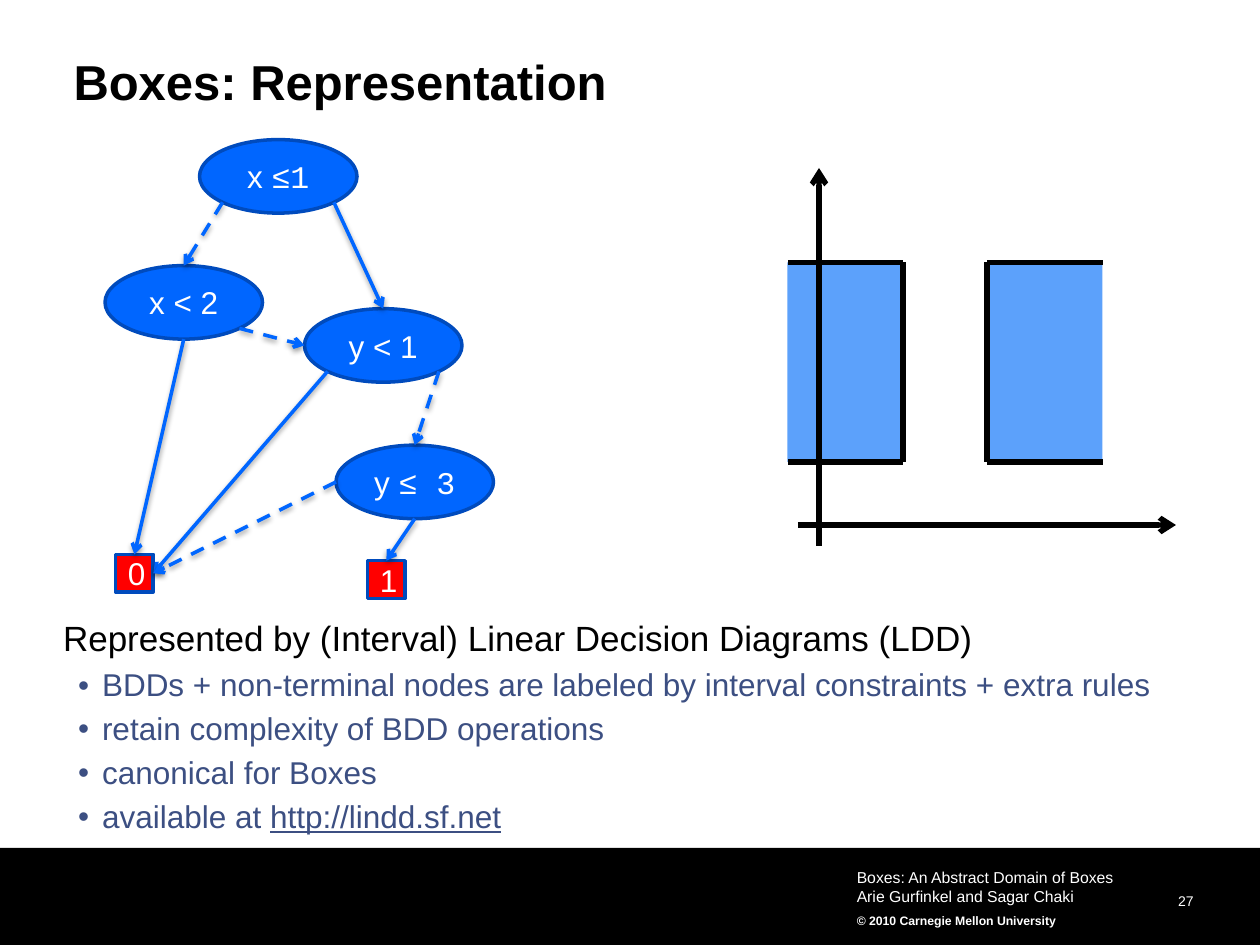
from dataclasses import dataclass

from lxml import etree
from pptx import Presentation
from pptx import util as u
from pptx.dml.color import RGBColor
from pptx.enum import dml, shapes, text
from pptx.oxml import parse_xml
from pptx.oxml.ns import qn

COLS, ROWS = 120, 90
WIDE, HIGH = u.Inches(10), u.Inches(7.5)
HUES = {"black": "000000", "white": "FFFFFF", "blue": "0066FF", "edge": "004BBD",
        "red": "FF0000", "sky": "5CA1FB", "slate": "3C4F82"}
DIAG = 0.5 ** 1.5
PORTS = {"top": (0.5, 0), "left": (0, 0.5), "low": (0.5, 1), "right": (1, 0.5),
         "sw": (0.5 - DIAG, 0.5 + DIAG), "se": (0.5 + DIAG, 0.5 + DIAG)}
SIDES = {"top": 0, "left": 1, "low": 2, "right": 3}
SHADE = ('<a:effectLst xmlns:a="http://schemas.openxmlformats.org/drawingml/2006/main">'
         '<a:outerShdw blurRad="40000" dist="20000" dir="5400000" rotWithShape="0">'
         '<a:srgbClr val="000000"><a:alpha val="38000"/></a:srgbClr>'
         '</a:outerShdw></a:effectLst>')


@dataclass
class Node:
    col: float
    row: float
    name: str
    math: str = ""
    leaf: bool = False
    inset: float = 0.1

    def size(self) -> tuple:
        return (3.6, 3.6) if self.leaf else (15, 7)

    def port(self, side: str) -> tuple:
        (w, h), (fx, fy) = self.size(), PORTS[side]
        return self.col + w * fx, self.row + h * fy


@dataclass
class Edge:
    start: str
    out: str
    end: str
    side: str
    dash: bool = False


NODES = {
    "x1": Node(19, 13.3, "x ", "≤1"),
    "x2": Node(10, 25.3, "x < 2"),
    "y1": Node(29, 29.4, "y < 1"),
    "y3": Node(32, 42.4, "y ", "≤ 3", inset=0),
    "no": Node(11, 52.8, "0", leaf=True),
    "yes": Node(35, 53.4, "1", leaf=True),
}
EDGES = [
    Edge("y1", "sw", "no", "right"),
    Edge("x1", "sw", "x2", "top", True),
    Edge("x1", "se", "y1", "top"),
    Edge("x2", "se", "y1", "left", True),
    Edge("y1", "se", "y3", "top", True),
    Edge("y3", "low", "yes", "top"),
    Edge("y3", "left", "no", "right", True),
    Edge("x2", "low", "no", "top"),
]


def hue(name: str) -> RGBColor:
    return RGBColor.from_string(HUES[name])


def across(col: float) -> int:
    return round(WIDE * col / COLS)


def down(row: float) -> int:
    return round(HIGH * row / ROWS)


def area(col: float, row: float, w: float, h: float) -> tuple:
    return across(col), down(row), across(w), down(h)


def style(run, size: float, tone: str, bold: bool = False, face: str = "Arial") -> None:
    run.font.size, run.font.bold, run.font.name = u.Pt(size), bold, face
    run.font.color.rgb = hue(tone)


def inset(frame, gap: float) -> None:
    frame.margin_left = frame.margin_right = u.Inches(gap)
    frame.margin_top = frame.margin_bottom = u.Inches(gap)


def block(kind, box: tuple, fill: str):
    shape = slide.shapes.add_shape(kind, *area(*box))
    shape.shadow.inherit = False
    shape.fill.solid()
    shape.fill.fore_color.rgb = hue(fill)
    shape.line.fill.background()
    return shape


def draw_node(node: Node):
    kind = shapes.MSO_SHAPE.RECTANGLE if node.leaf else shapes.MSO_SHAPE.OVAL
    shape = block(kind, (node.col, node.row, *node.size()), "red" if node.leaf else "blue")
    shape.line.color.rgb = hue("edge")
    shape.line.width = u.Pt(2)
    frame = shape.text_frame
    frame.vertical_anchor = text.MSO_ANCHOR.MIDDLE
    if node.inset == 0:
        inset(frame, 0)
    para = frame.paragraphs[0]
    para.text = node.name
    para.alignment = text.PP_ALIGN.CENTER
    style(para.runs[0], 18, "white")
    if node.math:
        run = para.add_run()
        run.text = node.math
        style(run, 18, "white", face="Courier New")
    return shape


def draw_line(start: tuple, end: tuple, tone: str = "black", width: float = 3,
              arrow: bool = False, dash: bool = False, shade: bool = False):
    line = slide.shapes.add_connector(shapes.MSO_CONNECTOR.STRAIGHT, across(start[0]),
                                      down(start[1]), across(end[0]), down(end[1]))
    line.line.color.rgb = hue(tone)
    line.line.width = u.Pt(width)
    if dash:
        line.line.dash_style = dml.MSO_LINE.DASH
    props = line._element.spPr
    if arrow:
        etree.SubElement(props.find(qn("a:ln")), qn("a:tailEnd"), type="arrow")
    if shade:
        props.append(parse_xml(SHADE))
    else:
        etree.SubElement(props, qn("a:effectLst"))
    return line


def draw_edge(edge: Edge, drawn: dict) -> None:
    goal = NODES[edge.end]
    line = draw_line(NODES[edge.start].port(edge.out), goal.port(edge.side),
                     "blue", 2, True, edge.dash, True)
    if goal.leaf:
        line.end_connect(drawn[edge.end], SIDES[edge.side])


def draw_half(wall: float, far: float) -> None:
    top, low = 25, 44
    block(shapes.MSO_SHAPE.RECTANGLE, (min(wall, far), top, abs(far - wall), low - top), "sky")
    for start, end in (((wall, top), (far, top)), ((wall, low), (wall, top)),
                       ((wall, low), (far, low))):
        draw_line(start, end)


def place(shape, box: tuple, gap: float, anchor):
    shape.left, shape.top, shape.width, shape.height = area(*box)
    frame = shape.text_frame
    frame.word_wrap = True
    frame.auto_size = text.MSO_AUTO_SIZE.NONE
    frame.vertical_anchor = anchor
    inset(frame, gap)
    return frame


def label(box: tuple, gap: float, words: str):
    shape = slide.shapes.add_textbox(*area(*box))
    frame = place(shape, box, gap, text.MSO_ANCHOR.MIDDLE)
    frame.text = words
    return frame.paragraphs


def draw_list(frame, items: list) -> None:
    frame.text = "\n".join(items)
    for rank, para in enumerate(frame.paragraphs):
        size = 18 if rank else 20
        para.level = 1 if rank else 0
        para.line_spacing = 0.95
        para.space_before, para.space_after = u.Pt(0), u.Pt(size / 4)
        props = para._p.get_or_add_pPr()
        props.set("marL", str(u.Inches(0.31 if rank else 0)))
        props.set("indent", str(u.Inches(-0.19 if rank else 0)))
        if rank:
            etree.SubElement(props, qn("a:buChar"), char="•")
        else:
            etree.SubElement(props, qn("a:buNone"))
        style(para.runs[0], size, "slate" if rank else "black")


deck = Presentation()
deck.slide_width, deck.slide_height = WIDE, HIGH
slide = deck.slides.add_slide(deck.slide_layouts[1])

block(shapes.MSO_SHAPE.RECTANGLE, (0, 80.75, COLS, ROWS - 80.75), "black")
page = label((102.7, 84.4, 11, 2.2), 0, "27")[0]
page.alignment = text.PP_ALIGN.RIGHT
page.line_spacing = u.Pt(13)
style(page.runs[0], 8, "white")
foot = label((81, 82, 30, 7), 0.05, "Boxes: An Abstract Domain of Boxes\n"
             "Arie Gurfinkel and Sagar Chaki\n© 2010 Carnegie Mellon University")
for para in foot:
    style(para.runs[0], 9, "white")
style(foot[-1].runs[0], 7, "white", True)
foot[-1].line_spacing = 1.5

title = place(slide.shapes.title, (7, 5.5, 107, 5), 0, text.MSO_ANCHOR.TOP)
title.text = "Boxes: Representation"
head = title.paragraphs[0]
head.alignment = text.PP_ALIGN.LEFT
head.line_spacing = 0.9
style(head.runs[0], 28, "black", True)

body = place(slide.placeholders[1], (6, 59, 107, 22), 0, text.MSO_ANCHOR.TOP)
draw_list(body, ["Represented by (Interval) Linear Decision Diagrams (LDD)",
                 "BDDs + non-terminal nodes are labeled by interval constraints + extra rules",
                 "retain complexity of BDD operations", "canonical for Boxes", "available at "])
site = body.paragraphs[-1].add_run()
site.text = "http://lindd.sf.net"
style(site, 18, "slate")
site.font.underline = True

drawn = {key: draw_node(node) for key, node in NODES.items()}
for edge in EDGES:
    draw_edge(edge, drawn)

draw_half(86, 75)
draw_half(94, 105)
draw_line((78, 52), (78, 16), arrow=True)
draw_line((76, 50), (112, 50), arrow=True)

deck.save("out.pptx")
